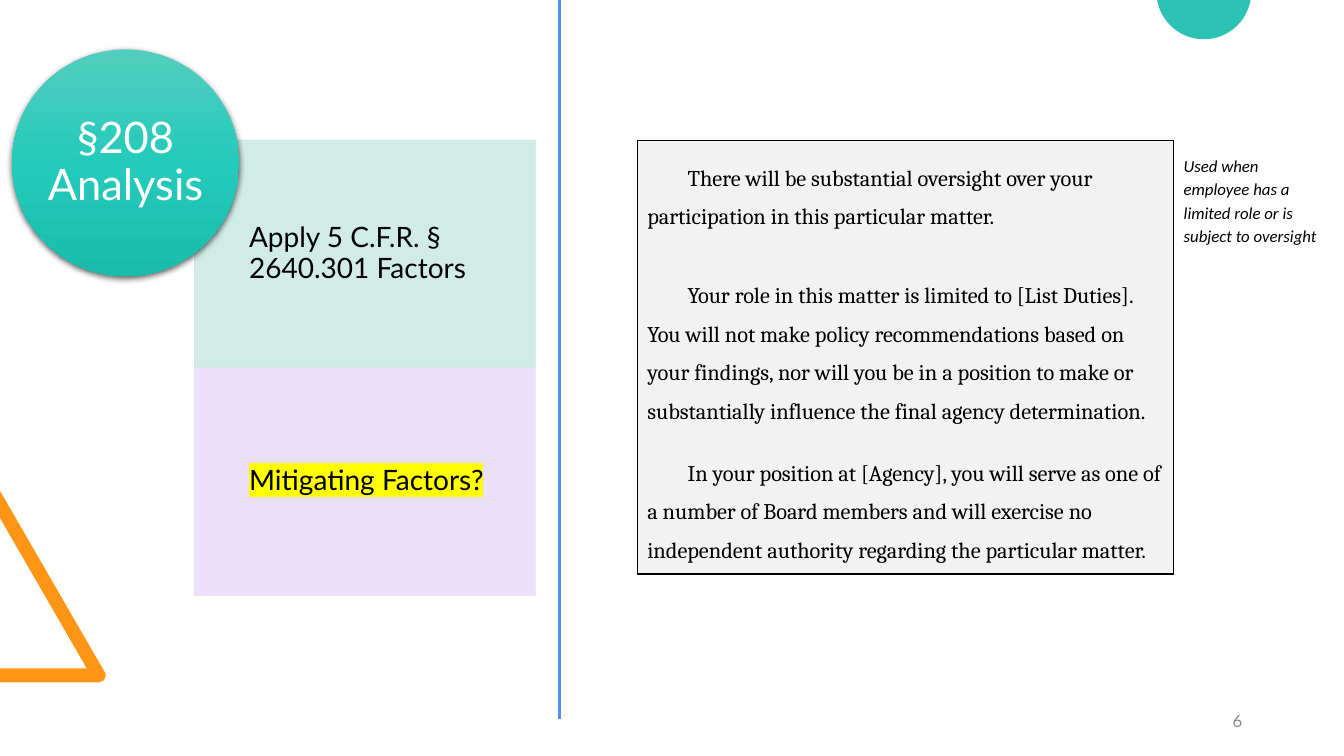
import copy
import dataclasses
import math

import lxml.etree
import pptx
import pptx.dml.color
import pptx.enum.shapes
import pptx.enum.text
import pptx.oxml.ns
import pptx.slide
import pptx.util

Inches = pptx.util.Inches
Pt = pptx.util.Pt
qn = pptx.oxml.ns.qn
Align = pptx.enum.text.PP_ALIGN
Anchor = pptx.enum.text.MSO_ANCHOR
Shape = pptx.enum.shapes.MSO_SHAPE

HUES = {
    "black": "000000", "white": "FFFFFF", "gray": "8C8C8C", "paper": "F2F2F2",
    "mint": "CDE9E5", "lilac": "E9DDFC", "teal": "2CC3B4", "orange": "FF9514",
    "blue": "4E91F0", "mark": "FFFF00",
    "top": "53CDBF", "mid": "24CBBA", "base": "1ABBAB",
}


def rgb(name):
    return pptx.dml.color.RGBColor.from_string(HUES[name])


def apply(item, vals):
    for key, val in vals.items():
        setattr(item, key, val)


def node(root, tag, **vals):
    return lxml.etree.SubElement(root, qn(tag), {key: str(val) for key, val in vals.items()})


def hue(root, name):
    return node(root, "a:srgbClr", val=HUES[name])


@dataclasses.dataclass
class Deck:
    slide: pptx.slide.Slide
    font: str = "Lato"

    def words(self, frame, text, size, color="black", pads=(0, 0, 0, 0),
              form=None, mark=None):
        sides = ("margin_left", "margin_top", "margin_right", "margin_bottom")
        apply(frame, dict(zip(sides, map(Inches, pads))))
        apply(frame, {"word_wrap": True, "vertical_anchor": Anchor.MIDDLE,
                      "auto_size": pptx.enum.text.MSO_AUTO_SIZE.NONE})
        self.para(frame.paragraphs[0], text, size, color, form=form, mark=mark)

    def para(self, para, text, size, color="black", face=None, form=None,
             look=None, mark=None):
        apply(para, form or {})
        run = para.add_run()
        run.text = text
        apply(run.font, {"name": face or self.font, "size": Pt(size), **(look or {})})
        run.font.color.rgb = rgb(color)
        if mark:
            light = lxml.etree.Element(qn("a:highlight"))
            hue(light, mark)
            run._r.rPr.find(qn("a:solidFill")).addnext(light)

    def shape(self, kind, box, color=None):
        item = self.slide.shapes.add_shape(kind, *map(Inches, box))
        item.shadow.inherit = False
        item.line.fill.background()
        if color:
            item.fill.solid()
            item.fill.fore_color.rgb = rgb(color)
        return item

    def panel(self, box, color, text, mark=None):
        item = self.shape(Shape.RECTANGLE, box, color)
        item.line.color.rgb = rgb(color)
        item.line.width = Pt(0.5)
        for tint in item._element.spPr.iter(qn("a:srgbClr")):
            node(tint, "a:alpha", val=90000)
        self.words(item.text_frame, text, 20, pads=(0.54, 0.16, 0.16, 0.16),
                   form={"alignment": Align.LEFT, "line_spacing": 0.9}, mark=mark)

    def badge(self, box):
        item = self.shape(Shape.OVAL, box)
        item.fill.gradient()
        item.fill.gradient_angle = 270
        first = item._element.spPr.find(".//" + qn("a:gs"))
        first.addnext(copy.deepcopy(first))
        for stop, (place, name) in zip(item.fill.gradient_stops,
                                       ((0, "top"), (0.5, "mid"), (1, "base"))):
            stop.position = place
            stop.color.rgb = rgb(name)
        glow = item._element.spPr.find(qn("a:effectLst"))
        shade = node(glow, "a:outerShdw", blurRad=Pt(4.5), dist=Pt(1.5),
                     dir=5400000, rotWithShape=0)
        node(hue(shade, "black"), "a:alpha", val=63000)

    def title(self, box, text):
        item = self.slide.shapes.title
        sides = ("left", "top", "width", "height")
        apply(item, dict(zip(sides, map(Inches, box))))
        self.words(item.text_frame, text, 31, "white",
                   form={"alignment": Align.CENTER, "line_spacing": 0.9})
        self.slide.shapes._spTree.append(item._element)

    def label(self, box, text, size, color, **form):
        item = self.slide.shapes.add_textbox(*map(Inches, box))
        self.words(item.text_frame, text, size, color, **form)

    def outline(self, spots, color):
        start, *rest = [(Inches(x), Inches(y)) for x, y in spots]
        build = self.slide.shapes.build_freeform(*start)
        build.add_line_segments(rest)
        item = build.convert_to_shape()
        item.shadow.inherit = False
        item.fill.solid()
        item.fill.fore_color.rgb = rgb(color)
        item.line.fill.background()

    def rule(self, start, end, color, width):
        item = self.slide.shapes.add_connector(
            pptx.enum.shapes.MSO_CONNECTOR.STRAIGHT, *map(Inches, start + end))
        item.line.color.rgb = rgb(color)
        item.line.width = Pt(width)
        node(item._element.spPr, "a:effectLst")

    def edge(self, cell, sides):
        props = cell._tc.get_or_add_tcPr()
        for spot, side in enumerate(sides):
            line = lxml.etree.Element(qn("a:ln" + side), {"w": str(Pt(1))})
            hue(node(line, "a:solidFill"), "black")
            props.insert(spot, line)

    def table(self, box, cols, rows, texts, note):
        item = self.slide.shapes.add_table(len(rows), len(cols), *map(Inches, box))
        grid = item.table
        apply(grid, {"first_row": False, "horz_banding": False})
        style = grid._tbl.tblPr.find(qn("a:tableStyleId"))
        style.text = "{2D5ABB26-0587-4C30-8999-92F81FD0307C}"
        for col, width in zip(grid.columns, cols):
            col.width = Inches(width)
        pads = {"margin_left": Inches(0.1), "margin_top": Inches(0.13),
                "margin_right": Inches(0.1), "margin_bottom": Inches(0.1)}
        for spot, (high, text) in enumerate(zip(rows, texts)):
            grid.rows[spot].height = Inches(high)
            cell, side = grid.cell(spot, 0), grid.cell(spot, 1)
            apply(cell, pads)
            apply(side, {**pads, "margin_right": 0})
            side.fill.background()
            cell.fill.solid()
            cell.fill.fore_color.rgb = rgb("paper")
            self.edge(cell, ("LRT", "LR", "LRB")[spot])
            para = cell.text_frame.paragraphs[0]
            self.para(para, text, 16, face="Cambria", form={"line_spacing": 1.5})
            para._p.get_or_add_pPr().set("indent", str(Inches(0.4)))
        self.para(grid.cell(0, 1).text_frame.paragraphs[0], note, 12,
                  face="Calibri", form={"line_spacing": 1.15}, look={"italic": True})


def main():
    show = pptx.Presentation()
    apply(show, {"slide_width": Inches(13.33), "slide_height": Inches(7.5)})
    deck = Deck(show.slides.add_slide(show.slide_layouts[5]))

    deck.outline([(0, 6.77), (0, 6.63), (0.86, 6.63), (0, 5.14), (0, 4.87),
                  (1.04, 6.67), (1.05, 6.7), (1.03, 6.75), (0.98, 6.77)], "orange")
    turns = [math.radians(10 + 4 * step) for step in range(41)]
    deck.outline([(11.94 + 0.47 * math.cos(turn), max(0, 0.47 * math.sin(turn) - 0.08))
                  for turn in turns], "teal")

    high = 2.26
    panels = (("mint", "Apply 5 C.F.R. § 2640.301 Factors", None),
              ("lilac", "Mitigating Factors?", "mark"))
    for spot, (color, text, mark) in enumerate(panels):
        deck.panel((1.93, 1.39 + spot * high, 3.38, high), color, text, mark)
    deck.badge((0.12, 0.49, 2.25, 2.25))
    deck.title((0.45, 0.82, 1.59, 1.59), "§208 Analysis")

    deck.label((9.42, 6.95, 3, 0.4), "6", 12, "gray", pads=(0.1, 0.05, 0.1, 0.05),
               form={"alignment": Align.RIGHT})
    deck.rule((5.55, 0), (5.55, 7.13), "blue", 2.25)
    deck.table((6.32, 1.39, 6.8, 4.3), (5.32, 1.48), (1.16, 1.76, 1.38), (
        "There will be substantial oversight over your participation in this particular matter.",
        "Your role in this matter is limited to [List Duties].  You will not make policy "
        "recommendations based on your findings, nor will you be in a position to make or "
        "substantially influence the final agency determination.",
        "In your position at [Agency], you will serve as one of a number of Board members "
        "and will exercise no independent authority regarding the particular matter.",
    ), "Used when employee has a limited role or is subject to oversight")
    show.save("out.pptx")


if __name__ == "__main__":
    main()
